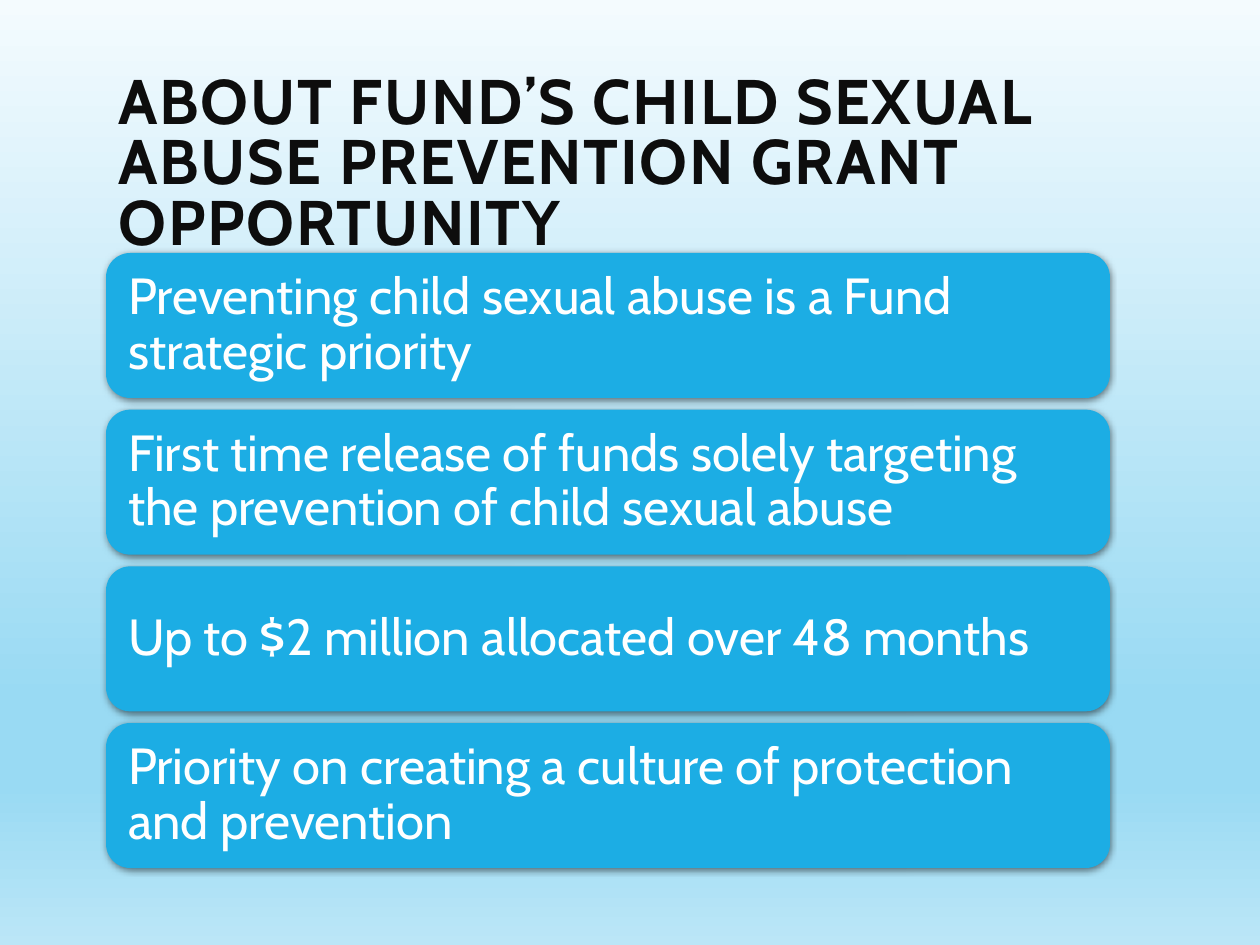
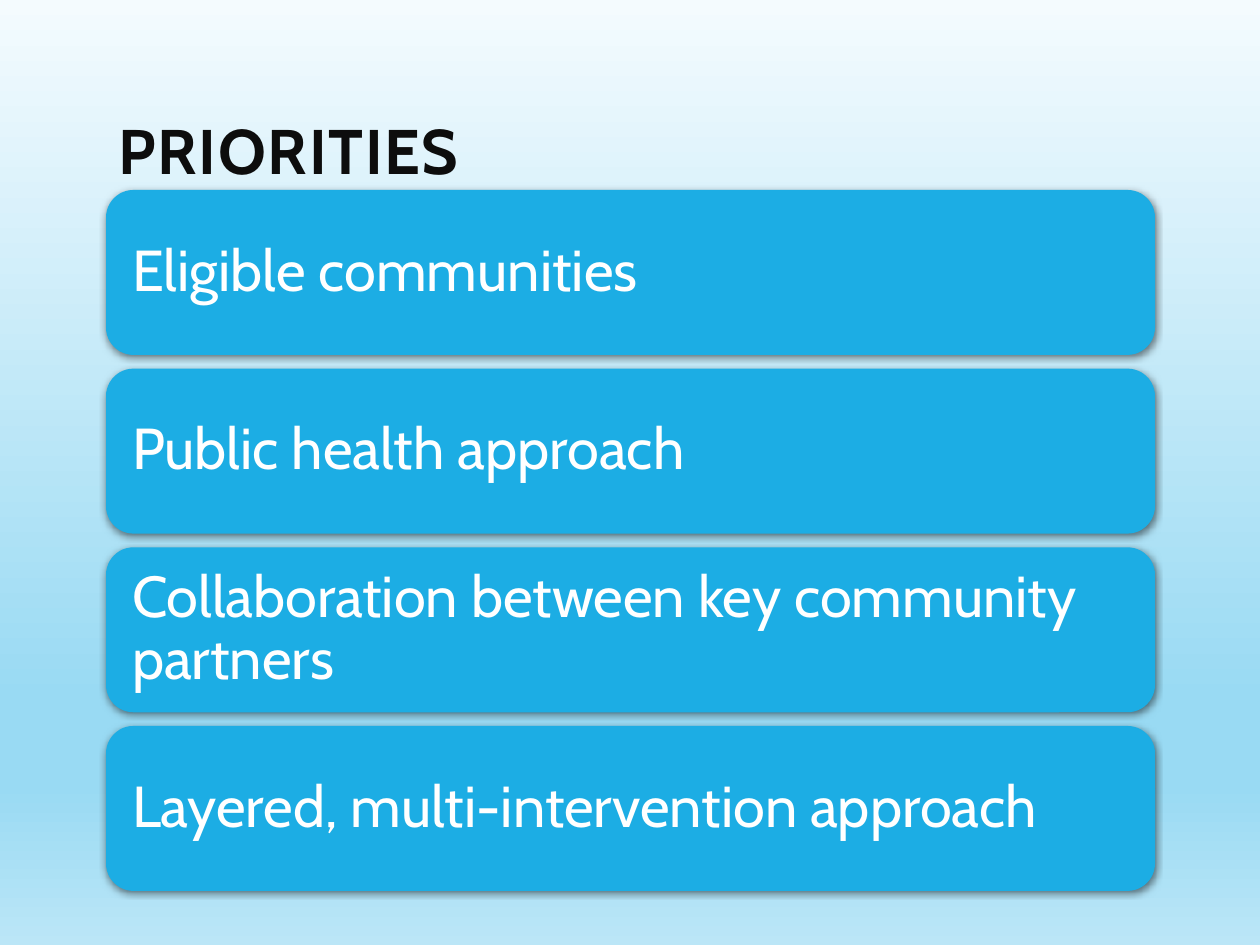
from lxml import etree
from pptx import Presentation
from pptx import util as u
from pptx.dml.color import RGBColor
from pptx.enum import shapes, text
from pptx.oxml import ns

EMU_PER_PX = 914400 / 126
COLORS = {"title": "0D0D0D", "box": "1CADE4", "box_text": "FFFFFF", "shadow": "000000",
          "sky_top": "F4FBFE", "sky_deep": "99DAF3", "sky_bottom": "BBE6F7"}
SKY_STOPS = [(0, "sky_top"), (74, "sky_deep"), (83, "sky_deep"), (100, "sky_bottom")]
TITLE_FONT = {"name": "Cabin", "size": u.Pt(36), "bold": True}
LEFT, TITLE_TOP, TITLE_WIDTH = 106, 81, 1004

PAGES = [
    {"title": "ABOUT FUND’S CHILD SEXUAL ABUSE PREVENTION GRANT OPPORTUNITY",
     "title_height": 171, "first_top": 253, "last_top": 723, "width": 1004, "height": 145,
     "inset": 15, "size": 29,
     "points": ["Preventing child sexual abuse is a Fund strategic priority",
                "First time release of funds solely targeting the prevention of child sexual abuse",
                "Up to $2 million allocated over 48 months",
                "Priority on creating a culture of protection and prevention"]},
    {"title": "PRIORITIES",
     "title_height": 150, "first_top": 190, "last_top": 726, "width": 1049, "height": 165,
     "inset": 18, "size": 33,
     "points": ["Eligible communities",
                "Public health approach",
                "Collaboration between key community partners",
                "Layered, multi-intervention approach"]},
]


def px(length):
    return u.Emu(round(length * EMU_PER_PX))


def add_color(parent, tag, color, **attributes):
    """Append an element holding one colour and return the colour element."""
    holder = etree.SubElement(parent, ns.qn(tag), attributes)
    return etree.SubElement(holder, ns.qn("a:srgbClr"), val=COLORS[color])


deck = Presentation()
deck.slide_width, deck.slide_height = px(1260), px(945)

# Sky gradient shared by every slide
sky = deck.slide_master.background.fill
sky.gradient()
sky.gradient_angle = 270
stops = deck.slide_master.element.find(".//" + ns.qn("p:bgPr")).find(".//" + ns.qn("a:gsLst"))
for stop in list(stops):
    stops.remove(stop)
for percent, color in SKY_STOPS:
    add_color(stops, "a:gs", color, pos=str(percent * 1000))

for content in PAGES:
    page = deck.slides.add_slide(deck.slide_layouts[5])

    title = page.shapes.title
    title.left, title.top = px(LEFT), px(TITLE_TOP)
    title.width, title.height = px(TITLE_WIDTH), px(content["title_height"])
    title.text_frame.text = content["title"]
    title.text_frame.auto_size = text.MSO_AUTO_SIZE.NONE
    title.text_frame.vertical_anchor = text.MSO_ANCHOR.MIDDLE
    para = title.text_frame.paragraphs[0]
    para.alignment, para.line_spacing = text.PP_ALIGN.LEFT, 0.8
    span = para.runs[0]
    for name, value in TITLE_FONT.items():
        setattr(span.font, name, value)
    span.font.color.rgb = RGBColor.from_string(COLORS["title"])
    span.font._element.set("spc", "100")

    # Equal boxes spread evenly from the first top to the last
    pitch = (content["last_top"] - content["first_top"]) / (len(content["points"]) - 1)
    for row, point in enumerate(content["points"]):
        box = page.shapes.add_shape(
            shapes.MSO_SHAPE.ROUNDED_RECTANGLE, px(LEFT), px(content["first_top"] + row * pitch),
            px(content["width"]), px(content["height"]))
        box.fill.solid()
        box.fill.fore_color.rgb = RGBColor.from_string(COLORS["box"])
        box.line.fill.background()
        box.shadow.inherit = False
        effects = box._element.spPr.find(ns.qn("a:effectLst"))
        shade = add_color(effects, "a:outerShdw", "shadow", blurRad=str(u.Pt(4)),
                          dist=str(u.Pt(1)), dir="5400000", rotWithShape="0")
        etree.SubElement(shade, ns.qn("a:alpha"), val="50000")

        frame = box.text_frame
        frame.text = point
        frame.word_wrap = True
        frame.vertical_anchor = text.MSO_ANCHOR.MIDDLE
        for side in ("left", "top", "right", "bottom"):
            setattr(frame, f"margin_{side}", px(content["inset"]))
        para = frame.paragraphs[0]
        para.alignment, para.line_spacing = text.PP_ALIGN.LEFT, 0.9
        span = para.runs[0]
        span.font.name, span.font.size = "Cabin", u.Pt(content["size"])
        span.font.color.rgb = RGBColor.from_string(COLORS["box_text"])

deck.save("out.pptx")
